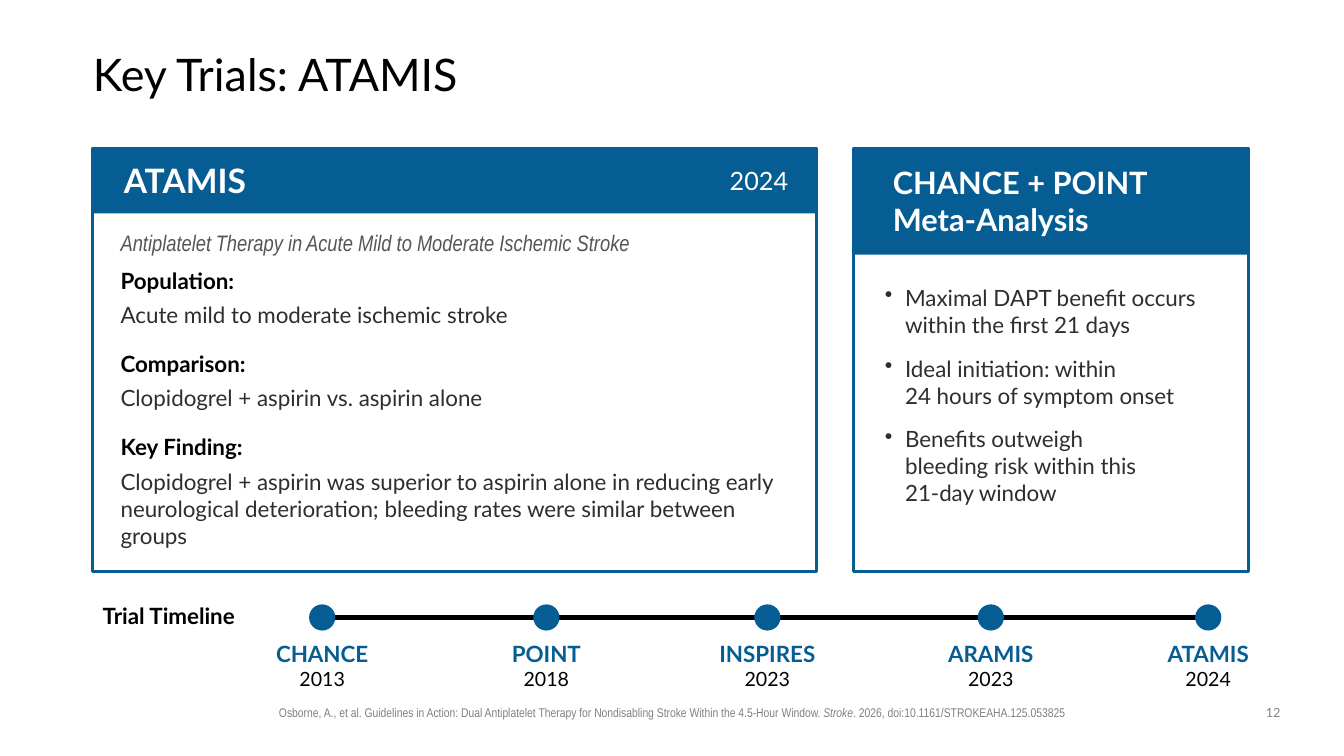
import pptx
import pptx.dml.color
import pptx.enum.shapes
import pptx.enum.text
import pptx.oxml
import pptx.oxml.ns
import pptx.util
from pptx.util import Cm

RGBColor = pptx.dml.color.RGBColor
BLUE = RGBColor(0x06, 0x5D, 0x93)
BLACK = RGBColor(0x00, 0x00, 0x00)
WHITE = RGBColor(0xFF, 0xFF, 0xFF)
BODY = RGBColor(0x2E, 0x2E, 0x2E)
SUBTITLE = RGBColor(0x55, 0x55, 0x55)
FOOTER = RGBColor(0x80, 0x80, 0x80)

ALIGN = pptx.enum.text.PP_ALIGN
ANCHOR = pptx.enum.text.MSO_ANCHOR
AUTO_SIZE = pptx.enum.text.MSO_AUTO_SIZE
SHAPE = pptx.enum.shapes.MSO_SHAPE


class SlideBuilder:
    """Holds the slide and its style; each method adds one kind of element."""

    font = "Lato"
    narrow_font = "Arial Narrow"

    def __init__(self, slide):
        self.slide = slide

    def text_box(self, left, top, width, height, wrap=True, grow=True):
        box = self.slide.shapes.add_textbox(Cm(left), Cm(top), Cm(width), Cm(height))
        frame = box.text_frame
        frame.word_wrap = wrap
        frame.auto_size = AUTO_SIZE.SHAPE_TO_FIT_TEXT if grow else AUTO_SIZE.NONE
        return frame

    def paragraph(self, frame, first=False, align=None, after=None, bullet=False):
        paragraph = frame.paragraphs[0] if first else frame.add_paragraph()
        if bullet:
            properties = paragraph._p.get_or_add_pPr()
            properties.set("marL", str(Cm(0.51)))
            properties.set("indent", str(-Cm(0.51)))
            mark = pptx.oxml.parse_xml(
                f'<a:buChar {pptx.oxml.ns.nsdecls("a")} char="•"/>')
            properties.append(mark)
        if align is not None:
            paragraph.alignment = align
        if after is not None:
            paragraph.space_after = pptx.util.Pt(after)
        return paragraph

    def run(self, paragraph, text, size, color, bold=False, italic=False, font=None):
        for index, line in enumerate(text.split("\n")):
            if index:
                paragraph.add_line_break()
            run = paragraph.add_run()
            run.text = line
            run.font.name = font or self.font
            run.font.size = pptx.util.Pt(size)
            run.font.color.rgb = color
            run.font.bold = bold
            run.font.italic = italic

    def label(self, place, text, size, color, bold=False, wrap=True, grow=True, align=None):
        frame = self.text_box(*place, wrap=wrap, grow=grow)
        paragraph = self.paragraph(frame, first=True, align=align)
        self.run(paragraph, text, size, color, bold)
        return frame

    def shape(self, kind, left, top, width, height, fill=None, line=None):
        shape = self.slide.shapes.add_shape(
            kind, Cm(left), Cm(top), Cm(width), Cm(height))
        shape.shadow.inherit = False
        if fill is None:
            shape.fill.background()
        else:
            shape.fill.solid()
            shape.fill.fore_color.rgb = fill
        if line is None:
            shape.line.fill.background()
        else:
            shape.line.color.rgb = line
            shape.line.width = pptx.util.Pt(2)

    def card(self, left, width, header_height):
        top, height = 3.73, 10.67
        self.shape(SHAPE.RECTANGLE, left, top, width, header_height, fill=BLUE)
        self.shape(SHAPE.RECTANGLE, left, top, width, height, line=BLUE)

    def line(self, start, end, y, color, weight):
        line = self.slide.shapes.add_connector(
            pptx.enum.shapes.MSO_CONNECTOR.STRAIGHT, Cm(start), Cm(y), Cm(end), Cm(y))
        line.line.color.rgb = color
        line.line.width = pptx.util.Pt(weight)
        line._element.spPr.append(
            pptx.oxml.parse_xml(f'<a:effectLst {pptx.oxml.ns.nsdecls("a")}/>'))


def add_header(builder):
    frame = builder.label((2.34, 1.02, 29.21, 1.83), "Key Trials: ATAMIS", 32, BLACK,
                          grow=False)
    frame.margin_left = frame.margin_right = frame.margin_top = frame.margin_bottom = 0
    frame.vertical_anchor = ANCHOR.MIDDLE
    frame.paragraphs[0].line_spacing = 0.9


def add_trial_card(builder):
    builder.card(2.34, 18.24, 1.65)
    builder.label((2.87, 3.91, 3.73, 1.27), "ATAMIS", 24, WHITE, bold=True, wrap=False)
    builder.label((18.14, 4.04, 2.01, 1.02), "2024", 18, WHITE, wrap=False)

    frame = builder.text_box(2.79, 5.64, 17.3, 8.41)
    subtitle = builder.paragraph(frame, first=True, after=8)
    builder.run(subtitle, "Antiplatelet Therapy in Acute Mild to Moderate Ischemic Stroke",
                16, SUBTITLE, italic=True, font=builder.narrow_font)
    sections = [
        ("Population:", 5, "Acute mild to moderate ischemic stroke", 16),
        ("Comparison:", 5, "Clopidogrel + aspirin vs. aspirin alone", 16),
        ("Key Finding:", 6,
         "Clopidogrel + aspirin was superior to aspirin alone in reducing early "
         "neurological deterioration; bleeding rates were similar between groups", None),
    ]
    for heading, heading_after, detail, detail_after in sections:
        builder.run(builder.paragraph(frame, after=heading_after), heading, 16, BLACK, bold=True)
        builder.run(builder.paragraph(frame, after=detail_after), detail, 16, BODY)


def add_meta_analysis_card(builder):
    builder.card(21.51, 9.96, 2.69)
    frame = builder.label((22.25, 4.01, 7.26, 2.13), "CHANCE + POINT", 22, WHITE,
                          bold=True, wrap=False)
    builder.run(builder.paragraph(frame), "Meta-Analysis", 22, WHITE, bold=True)

    frame = builder.text_box(22.05, 7.04, 9.02, 5.89)
    points = [
        "Maximal DAPT benefit occurs within the first 21 days",
        "Ideal initiation: within \n24 hours of symptom onset",
        "Benefits outweigh \nbleeding risk within this \n21-day window",
    ]
    for index, point in enumerate(points):
        paragraph = builder.paragraph(frame, first=index == 0, after=12, bullet=True)
        builder.run(paragraph, point, 16, BODY)


def add_timeline(builder):
    axis_y, dot = 15.56, 0.66
    # Trial, year, centre of the dot, width of the label
    milestones = [
        ("CHANCE", "2013", 8.12, 3.0),
        ("POINT", "2018", 13.77, 3.0),
        ("INSPIRES", "2023", 19.34, 3.43),
        ("ARAMIS", "2023", 24.97, 3.0),
        ("ATAMIS", "2024", 30.45, 2.67),
    ]
    builder.label((2.34, 15.06, 5.44, 0.94), "Trial Timeline", 16, BLACK, bold=True)
    builder.line(milestones[0][2], milestones[-1][2], axis_y, BLACK, 4)
    for trial, year, center, width in milestones:
        builder.shape(SHAPE.OVAL, center - dot / 2, axis_y - dot / 2, dot, dot, fill=BLUE)
        frame = builder.label((center - width / 2, 16.0, width, 1.55), trial, 16, BLUE,
                              bold=True, align=ALIGN.CENTER)
        builder.run(builder.paragraph(frame, align=ALIGN.CENTER), year, 14, BLACK)


def add_footer(builder):
    frame = builder.text_box(5.99, 17.65, 21.89, 0.64)
    citation = builder.paragraph(frame, first=True, align=ALIGN.CENTER)
    parts = [
        ("Osborne, A., et al. Guidelines in Action: Dual Antiplatelet Therapy for "
         "Nondisabling Stroke Within the 4.5-Hour Window. ", False),
        ("Stroke", True),
        (". 2026, doi:10.1161/STROKEAHA.125.053825", False),
    ]
    for text, italic in parts:
        builder.run(citation, text, 9, FOOTER, italic=italic, font=builder.narrow_font)
    builder.label((31.55, 17.65, 1.07, 0.66), "12", 9, FOOTER, grow=False, align=ALIGN.CENTER)


def main():
    presentation = pptx.Presentation()
    presentation.slide_width = Cm(33.87)
    presentation.slide_height = Cm(19.05)
    builder = SlideBuilder(presentation.slides.add_slide(presentation.slide_layouts[6]))

    add_header(builder)
    add_trial_card(builder)
    add_meta_analysis_card(builder)
    add_timeline(builder)
    add_footer(builder)

    presentation.save("out.pptx")


if __name__ == "__main__":
    main()
